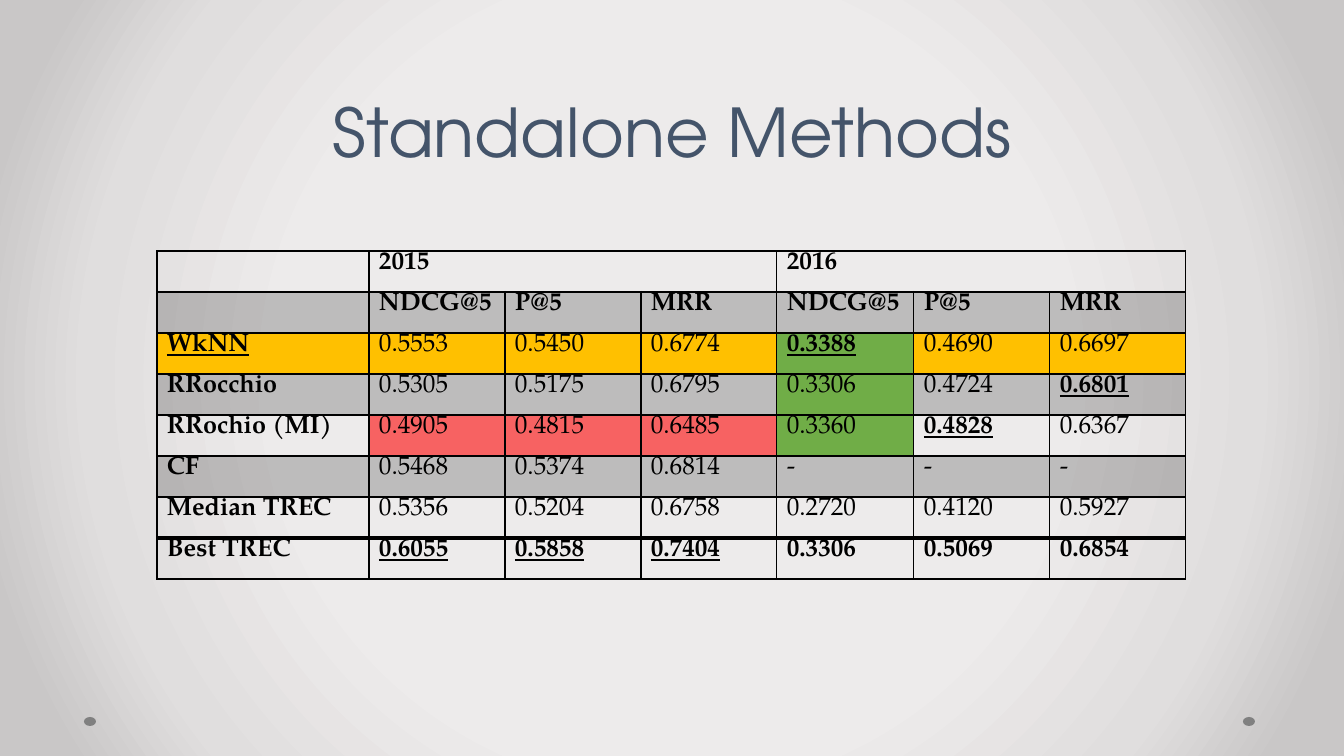
import pptx
import pptx.dml.color
import pptx.enum.shapes
import pptx.enum.text
import pptx.oxml
import pptx.oxml.ns
import pptx.util

SCALE = 12192000 / 1344
BLACK = "000000"
SHADE = (BLACK, 20)
GOLD, GREEN, RED = ("FFC000", 100), ("70AD47", 100), ("FF0000", 58)
WIDTHS = [212, 136, 136, 136, 137, 136, 136]
HEIGHT = 41

# A leading "_" marks a bold, underlined entry.
ROWS = [
    ["", "2015", "", "", "2016", "", ""],
    ["", "NDCG@5", "P@5", "MRR", "NDCG@5", "P@5", "MRR"],
    ["_WkNN", "0.5553", "0.5450", "0.6774", "_0.3388", "0.4690", "0.6697"],
    ["RRocchio", "0.5305", "0.5175", "0.6795", "0.3306", "0.4724", "_0.6801"],
    ["RRochio (MI)", "0.4905", "0.4815", "0.6485", "0.3360", "_0.4828", "0.6367"],
    ["CF", "0.5468", "0.5374", "0.6814", "-", "-", "-"],
    ["Median TREC", "0.5356", "0.5204", "0.6758", "0.2720", "0.4120", "0.5927"],
    ["Best TREC", "_0.6055", "_0.5858", "_0.7404", "0.3306", "0.5069", "0.6854"],
]
BOLD_ROWS = (0, 1, 7)
RULES = {1: 2, 7: 4}  # width in points of the line above a row


def px(n):
    return pptx.util.Emu(round(n * SCALE))


def color(code):
    return pptx.dml.color.RGBColor.from_string(code)


def node(xml):
    """Parse one DrawingML element written with the a: prefix."""
    head, mark, rest = xml.partition(" ")
    return pptx.oxml.parse_xml(f"{head} {pptx.oxml.ns.nsdecls('a')}{mark}{rest}")


def write(frame, text, font="TeX Gyre Pagella", size=18, ink=BLACK,
          bold=False, under=False, align=None, lead=None):
    para = frame.paragraphs[0]
    para.alignment = align
    para.line_spacing = lead
    run = para.add_run()
    run.text = text
    run.font.name, run.font.size = font, pptx.util.Pt(size)
    run.font.bold, run.font.underline = bold, under
    run.font.color.rgb = color(ink)


def tint(row, col):
    """Choose the fill of a cell: colour and opacity, or None."""
    if col == 4 and row in (2, 3, 4):
        return GREEN
    if row == 2:
        return GOLD
    if row == 4 and col in (1, 2, 3):
        return RED
    return SHADE if row in (1, 3, 5) else None


class Slide:
    def __init__(self, deck):
        self.slide = deck.slides.add_slide(deck.slide_layouts[5])
        self.shapes = self.slide.shapes

    def back(self, stops):
        self.slide.background.fill.gradient()
        grad = self.slide.element.find(".//" + pptx.oxml.ns.qn("a:gradFill"))
        marks = "".join(f'<a:gs pos="{pos * 1000}"><a:srgbClr val="{code}"/></a:gs>'
                        for pos, code in stops)
        new = node(f'<a:gradFill rotWithShape="1"><a:gsLst>{marks}</a:gsLst>'
                   '<a:path path="circle"><a:fillToRect l="50000" t="50000" '
                   'r="50000" b="50000"/></a:path></a:gradFill>')
        grad.getparent().replace(grad, new)

    def dot(self, x, y):
        dot = self.shapes.add_shape(pptx.enum.shapes.MSO_SHAPE.OVAL,
                                    px(x), px(y), px(12), px(9))
        dot.shadow.inherit = False
        dot.fill.solid()
        dot.fill.fore_color.rgb = color("808080")
        dot.line.fill.background()

    def title(self, text):
        box = self.shapes.title
        box.left, box.top, box.width, box.height = px(67), px(0), px(1210), px(176)
        box.text_frame.vertical_anchor = pptx.enum.text.MSO_ANCHOR.BOTTOM
        write(box.text_frame, text, font="TeX Gyre Adventor", size=48, ink="44546A",
              align=pptx.enum.text.PP_ALIGN.CENTER, lead=pptx.util.Pt(48))

    def edges(self, cell, row):
        """Draw the four borders, then the fill that must follow them."""
        props = cell._tc.get_or_add_tcPr()
        sides = {"L": 1, "R": 1, "T": RULES.get(row, 1), "B": RULES.get(row + 1, 1)}
        for spot, (side, width) in enumerate(sides.items()):
            props.insert(spot, node(
                f'<a:ln{side} w="{width * 12700}"><a:solidFill>'
                f'<a:srgbClr val="{BLACK}"/></a:solidFill></a:ln{side}>'))

    def paint(self, cell, fill):
        if fill is None:
            cell.fill.background()
            return
        code, alpha = fill
        cell.fill.solid()
        cell.fill.fore_color.rgb = color(code)
        if alpha < 100:
            tone = cell._tc.tcPr.find(".//" + pptx.oxml.ns.qn("a:srgbClr"))
            tone.append(node(f'<a:alpha val="{alpha * 1000}"/>'))

    def table(self, x, y):
        grid = self.shapes.add_table(len(ROWS), len(WIDTHS), px(x), px(y),
                                     px(sum(WIDTHS)), px(HEIGHT * len(ROWS))).table
        grid.first_row = grid.horz_banding = False
        for col, width in enumerate(WIDTHS):
            grid.columns[col].width = px(width)
        for r, texts in enumerate(ROWS):
            grid.rows[r].height = px(HEIGHT)
            for c, text in enumerate(texts):
                cell = grid.cell(r, c)
                cell.margin_top = cell.margin_bottom = 0
                cell.margin_left = cell.margin_right = px(10)
                self.paint(cell, tint(r, c))
                self.edges(cell, r)
                if text:
                    mark = text.startswith("_")
                    write(cell.text_frame, text.lstrip("_"), under=mark,
                          bold=mark or c == 0 or r in BOLD_ROWS)
        for c in (1, 4):
            grid.cell(0, c).merge(grid.cell(0, c + 2))


def main():
    deck = pptx.Presentation()
    deck.slide_width, deck.slide_height = px(1344), px(756)
    page = Slide(deck)
    page.back([(50, "EDEBEB"), (76, "E0DEDE"), (92, "C9C7C7")])
    for x in (1243, 84):
        page.dot(x, 717)
    page.title("Standalone Methods")
    page.table(157, 251)
    deck.save("out.pptx")


if __name__ == "__main__":
    main()
